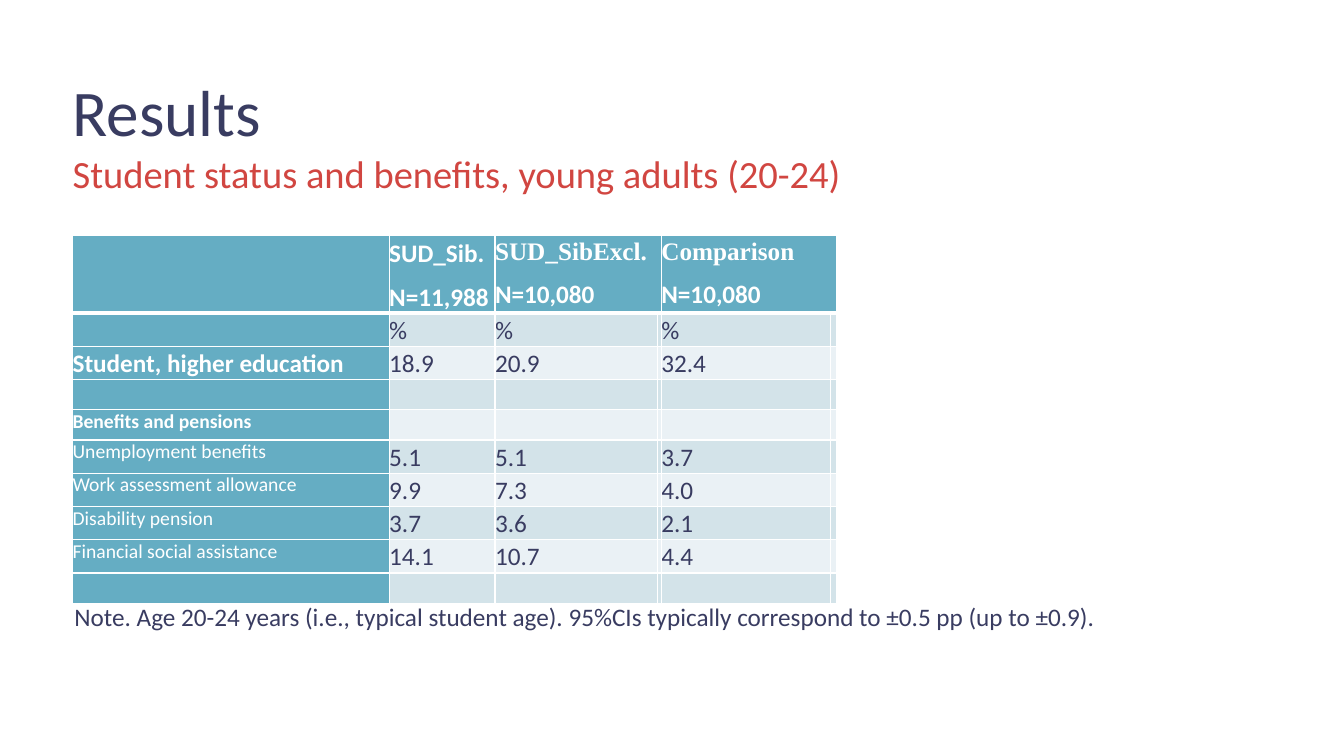
from lxml import etree
from pptx import Presentation
from pptx.dml.color import RGBColor
from pptx.enum import text
from pptx.oxml import ns
from pptx.util import Inches, Pt

NAVY, RED, WHITE = "393C61", "D14641", "FFFFFF"
TEAL, BAND_DARK, BAND_LIGHT = "65ADC3", "D3E3E9", "EAF1F5"
BODY_FONT, HEADER_FONT = "Calibri", "Times New Roman"

COLUMN_WIDTHS = [3.14, 1.05, 1.61, 0.04, 1.68, 0.06]
VALUE_COLUMNS = [1, 2, 4]
HEADER_HEIGHT, TEXT_HEIGHT, EMPTY_HEIGHT = 0.75, 0.33, 0.3
GROUPS = [
    ("SUD_Sib.", "N=11,988", BODY_FONT),
    ("SUD_SibExcl.", "N=10,080", HEADER_FONT),
    ("Comparison", "N=10,080", HEADER_FONT),
]
# Label, label size, label bold, one value per group
ROWS = [
    ("", 18, False, ["%", "%", "%"]),
    ("Student, higher education", 18, True, ["18.9", "20.9", "32.4"]),
    ("", 18, False, []),
    ("Benefits and pensions", 14, True, []),
    ("Unemployment benefits", 14, False, ["5.1", "5.1", "3.7"]),
    ("Work assessment allowance", 14, False, ["9.9", "7.3", "4.0"]),
    ("Disability pension", 14, False, ["3.7", "3.6", "2.1"]),
    ("Financial social assistance", 14, False, ["14.1", "10.7", "4.4"]),
    ("", 18, False, []),
]


def rgb(color):
    return RGBColor.from_string(color)


def place(shape, left, top, width, height):
    shape.left, shape.top = Inches(left), Inches(top)
    shape.width, shape.height = Inches(width), Inches(height)


def no_margins(box):
    box.margin_left = box.margin_right = box.margin_top = box.margin_bottom = 0


def write(paragraph, words, size, color, bold=False, font=BODY_FONT, line=1.0, after=0):
    paragraph.text = words
    paragraph.alignment = text.PP_ALIGN.LEFT
    paragraph.line_spacing = line
    paragraph.space_before = Pt(0)
    paragraph.space_after = Pt(after)
    paragraph.font.size = Pt(size)
    paragraph.font.name = font
    paragraph.font.bold = bold
    paragraph.font.color.rgb = rgb(color)


def add_heading(placeholder, words, top, height, size, color, line=1.0):
    place(placeholder, 0.72, top, 11.88, height)
    frame = placeholder.text_frame
    no_margins(frame)
    frame.auto_size = text.MSO_AUTO_SIZE.NONE
    properties = frame.paragraphs[0]._p.get_or_add_pPr()
    properties.set("marL", "0")
    properties.set("indent", "0")
    etree.SubElement(properties, ns.qn("a:buNone"))
    write(frame.paragraphs[0], words, size, color, line=line)


def add_borders(cell, widths):
    properties = cell._tc.get_or_add_tcPr()
    for position, (side, width) in enumerate(widths.items()):
        border = etree.Element(ns.qn(f"a:{side}"), w=str(Pt(width)))
        fill = etree.SubElement(border, ns.qn("a:solidFill"))
        etree.SubElement(fill, ns.qn("a:srgbClr"), val=WHITE)
        properties.insert(position, border)


def style_cell(cell, row, column):
    no_margins(cell)
    cell.fill.solid()
    band = BAND_DARK if row % 2 else BAND_LIGHT
    cell.fill.fore_color.rgb = rgb(TEAL if row == 0 or column == 0 else band)
    top, bottom = (3 if row == 1 else 1), (3 if row == 0 else 1)
    add_borders(cell, {"lnL": 1, "lnR": 1, "lnT": top, "lnB": bottom})
    cell.text_frame.paragraphs[0].font.size = Pt(14)


def add_results_table(slide):
    heights = [HEADER_HEIGHT] + [
        TEXT_HEIGHT if values else EMPTY_HEIGHT for *_, values in ROWS]
    results = slide.shapes.add_table(
        len(heights), len(COLUMN_WIDTHS), Inches(0.72), Inches(2.34),
        Inches(sum(COLUMN_WIDTHS)), Inches(sum(heights))).table
    for column, width in zip(results.columns, COLUMN_WIDTHS):
        column.width = Inches(width)
    for row, height in zip(results.rows, heights):
        row.height = Inches(height)
    for row in range(len(heights)):
        for column in range(len(COLUMN_WIDTHS)):
            style_cell(results.cell(row, column), row, column)

    # Group headers, the last two spanning their narrow spacer columns
    for column in VALUE_COLUMNS[1:]:
        results.cell(0, column).merge(results.cell(0, column + 1))
    for column, (group, count, font) in zip(VALUE_COLUMNS, GROUPS):
        frame = results.cell(0, column).text_frame
        write(frame.paragraphs[0], group, 18, WHITE, True, font, 1.07, 8)
        write(frame.add_paragraph(), count, 18, WHITE, True, line=1.07, after=8)

    # Row labels and percentages
    for row, (label, size, bold, values) in enumerate(ROWS, start=1):
        if label:
            line, after = (1.07, 6) if size == 18 else (1.0, 0)
            write(results.cell(row, 0).text_frame.paragraphs[0], label, size, WHITE,
                  bold, line=line, after=after)
        for column, value in zip(VALUE_COLUMNS, values):
            write(results.cell(row, column).text_frame.paragraphs[0], value, 18, NAVY,
                  line=1.07, after=6)


def add_note(slide, words):
    note = slide.shapes.add_textbox(Inches(0.64), Inches(5.92), Inches(10.43), Inches(0.4))
    note.text_frame.word_wrap = True
    write(note.text_frame.paragraphs[0], words, 18, NAVY)


def main():
    deck = Presentation()
    deck.slide_width, deck.slide_height = Inches(13.33), Inches(7.5)
    slide = deck.slides.add_slide(deck.slide_layouts[1])

    # Title and subtitle
    add_heading(slide.shapes.title, "Results", 0.79, 0.7, 46.5, NAVY, 0.9)
    add_heading(slide.placeholders[1], "Student status and benefits, young adults (20-24)",
                1.49, 0.57, 27.5, RED)

    # Results with their note
    add_results_table(slide)
    add_note(slide, "Note. Age 20-24 years (i.e., typical student age). "
                    "95%CIs typically correspond to ±0.5 pp (up to ±0.9).")
    deck.save("out.pptx")


if __name__ == "__main__":
    main()
